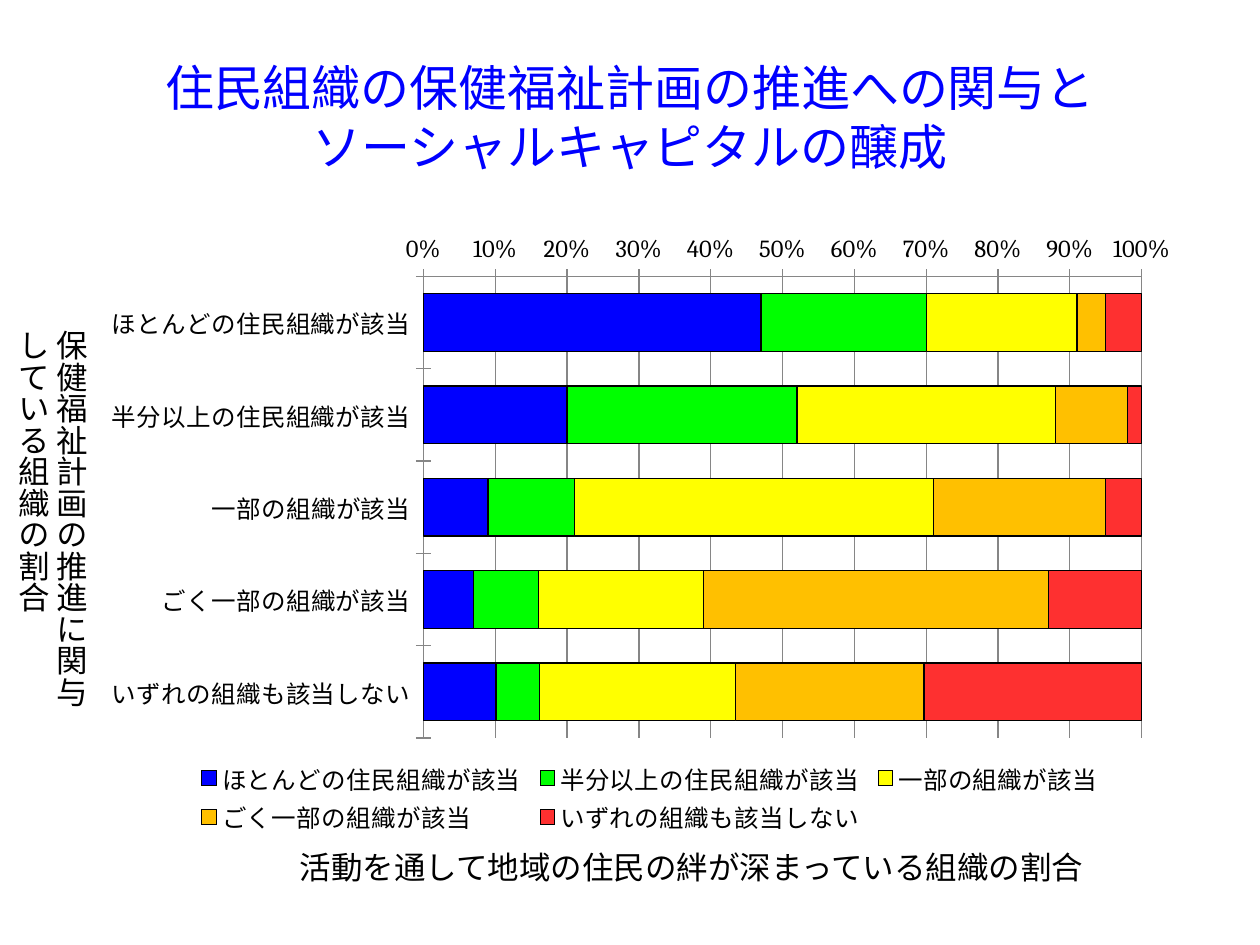
from dataclasses import dataclass

from lxml import etree
from pptx import Presentation
from pptx.chart.data import CategoryChartData
from pptx.dml.color import RGBColor
from pptx.enum.chart import XL_CHART_TYPE, XL_LEGEND_POSITION, XL_TICK_MARK
from pptx.enum.text import MSO_ANCHOR, MSO_AUTO_SIZE, PP_ALIGN
from pptx.oxml.ns import qn
from pptx.util import Inches, Pt

STACKED_BAR = XL_CHART_TYPE.BAR_STACKED_100
LEGEND_BOTTOM = XL_LEGEND_POSITION.BOTTOM
TICK_CROSS = XL_TICK_MARK.CROSS
MIDDLE, TOP = MSO_ANCHOR.MIDDLE, MSO_ANCHOR.TOP
CENTER, LEFT = PP_ALIGN.CENTER, PP_ALIGN.LEFT
FIT_SHAPE, FIT_NONE = MSO_AUTO_SIZE.SHAPE_TO_FIT_TEXT, MSO_AUTO_SIZE.NONE

COLORS = {"title": "0000FF", "text": "000000", "grid": "868686"}
FONT, NUMBER_FONT = "Calibri", "Cambria"


@dataclass
class Caption:
    """A text box; each line is a paragraph, or a line break in a title."""
    lines: list[str]
    left: float
    top: float
    width: float
    height: float
    size: int = 18
    color: str = "text"
    title: bool = False
    vertical: bool = False


@dataclass
class Answer:
    """One answer level: a category as well as a series of the chart."""
    name: str
    color: str
    values: list[int]


CAPTIONS = [
    Caption(["住民組織の保健福祉計画の推進への関与と", "ソーシャルキャピタルの醸成"],
            0.37, 0.3, 9.26, 1.25, size=28, color="title", title=True),
    Caption(["保健福祉計画の推進に関与", "している組織の割合"],
            -0.05, 2.52, 0.81, 3.08, vertical=True),
    Caption(["活動を通して地域の住民の絆が深まっている組織の割合"],
            2.28, 6.68, 6.47, 0.4),
]

ANSWERS = [
    Answer("ほとんどの住民組織が該当", "0000FF", [47, 20, 9, 7, 10]),
    Answer("半分以上の住民組織が該当", "00FF00", [23, 32, 12, 9, 6]),
    Answer("一部の組織が該当", "FFFF00", [21, 36, 50, 23, 27]),
    Answer("ごく一部の組織が該当", "FFC000", [4, 10, 24, 48, 26]),
    Answer("いずれの組織も該当しない", "FE3030", [5, 2, 5, 13, 30]),
]


def rgb(name: str) -> RGBColor:
    return RGBColor.from_string(COLORS[name])


def style_font(font, size: int, color: str = "text", face: str = FONT) -> None:
    font.size = Pt(size)
    font.name = face
    font.color.rgb = rgb(color)


def add_caption(page, caption: Caption) -> None:
    box = page.shapes.add_textbox(Inches(caption.left), Inches(caption.top),
                                  Inches(caption.width), Inches(caption.height))
    frame = box.text_frame
    frame.word_wrap = not caption.vertical
    frame.auto_size = FIT_NONE if caption.title else FIT_SHAPE
    frame.vertical_anchor = MIDDLE if caption.title else TOP
    if caption.vertical:
        box.element.txBody.find(qn("a:bodyPr")).set("vert", "eaVert")
    para = frame.paragraphs[0]
    for index, line in enumerate(caption.lines):
        if index and caption.title:
            para.add_line_break()
        elif index:
            para = frame.add_paragraph()
        para.alignment = CENTER if caption.title else LEFT
        span = para.add_run()
        span.text = line
        style_font(span.font, caption.size, caption.color)


def place_part(part, position: int, left: float, top: float,
               width: float, height: float, inner: bool = False) -> None:
    """Give a chart part a manual layout, in fractions of the chart."""
    for old in part.findall(qn("c:layout")):
        part.remove(old)
    layout = etree.Element(qn("c:layout"))
    manual = etree.SubElement(layout, qn("c:manualLayout"))
    settings = [("layoutTarget", "inner")] if inner else []
    settings += [("xMode", "edge"), ("yMode", "edge"),
                 ("x", left), ("y", top), ("w", width), ("h", height)]
    for tag, value in settings:
        etree.SubElement(manual, qn(f"c:{tag}")).set("val", str(value))
    part.insert(position, layout)


def add_answer_chart(page) -> None:
    data = CategoryChartData(number_format="#,##0")
    data.categories = [answer.name for answer in ANSWERS]
    for answer in ANSWERS:
        data.add_series(answer.name, answer.values)
    chart = page.shapes.add_chart(STACKED_BAR, Inches(0.73), Inches(1.75),
                                  Inches(8.77), Inches(4.95), data).chart
    chart.has_title = False
    style_font(chart.font, 12)

    # Bars
    plot = chart.plots[0]
    plot.gap_width, plot.overlap = 60, 100
    plot.vary_by_categories = False
    for series, answer in zip(plot.series, ANSWERS):
        series.format.fill.solid()
        series.format.fill.fore_color.rgb = RGBColor.from_string(answer.color)
        series.format.line.color.rgb = rgb("text")
        series.format.line.width = Pt(0.75)

    # Axes
    rows, scale = chart.category_axis, chart.value_axis
    rows.reverse_order = True
    scale.has_major_gridlines = True
    scale.minimum_scale, scale.maximum_scale, scale.major_unit = 0, 1, 0.1
    scale.tick_labels.number_format = "0%"
    scale.tick_labels.number_format_is_linked = False
    for axis, face in ((rows, FONT), (scale, NUMBER_FONT)):
        axis.major_tick_mark = TICK_CROSS
        style_font(axis.tick_labels.font, 14, face=face)
        axis.format.line.color.rgb = rgb("grid")
        axis.format.line.width = Pt(0.75)
    scale.major_gridlines.format.line.color.rgb = rgb("grid")
    scale.major_gridlines.format.line.width = Pt(0.75)

    # Legend and placing
    chart.has_legend = True
    chart.legend.position = LEGEND_BOTTOM
    chart.legend.include_in_layout = False
    style_font(chart.legend.font, 14)
    area = chart.element.find(qn("c:chart"))
    place_part(area.find(qn("c:plotArea")), 0, 0.3, 0.09, 0.65, 0.74, inner=True)
    place_part(area.find(qn("c:legend")), 1, 0.09, 0.86, 0.83, 0.13)


def main() -> None:
    deck = Presentation()
    deck.slide_width, deck.slide_height = Inches(10), Inches(7.5)
    page = deck.slides.add_slide(deck.slide_layouts[6])
    add_answer_chart(page)
    for caption in CAPTIONS:
        add_caption(page, caption)
    deck.save("out.pptx")


if __name__ == "__main__":
    main()
